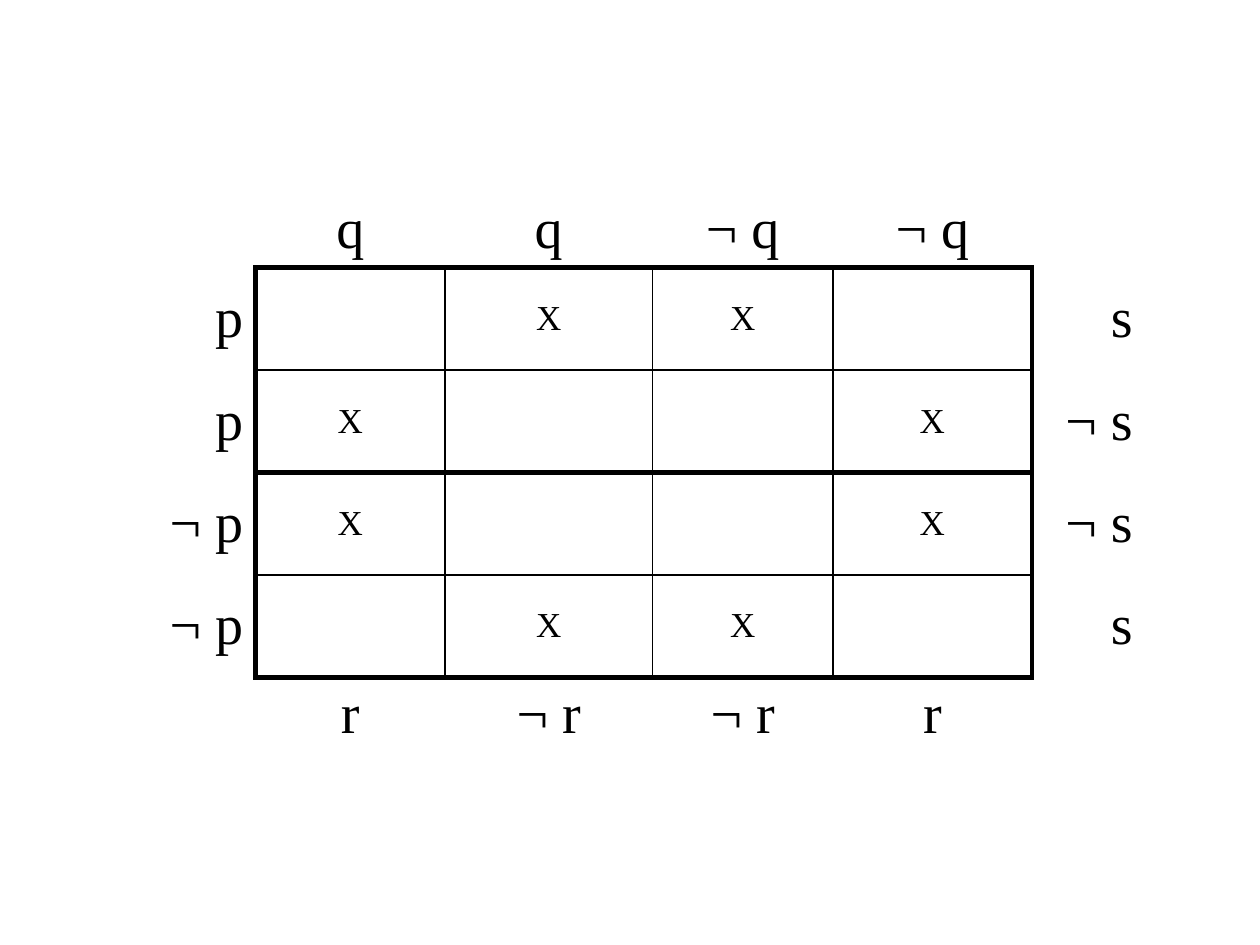
"""Build a slide with a four-variable Karnaugh map."""
from lxml import etree
from pptx import Presentation
from pptx.dml.color import RGBColor
from pptx.enum import text
from pptx.oxml import ns
from pptx.util import Inches, Pt

COLORS = {"ink": "000000"}
FONT = "Times New Roman"
COLUMN_WIDTHS = [1.13, 1.5, 1.65, 1.43, 1.58, 0.9]
ROW_HEIGHT = 4.88 / 6
GRID = [
    ["", "q", "q", "¬ q", "¬ q", ""],
    ["p", "", "X", "X", "", "s"],
    ["p", "X", "", "", "X", "¬ s"],
    ["¬ p", "X", "", "", "X", "¬ s"],
    ["¬ p", "", "X", "X", "", "s"],
    ["", "r", "¬ r", "¬ r", "r", ""],
]
INNER = range(1, 5)
HORIZONTAL_LINES = {1: 3, 2: 1, 3: 3, 4: 1, 5: 3}
VERTICAL_LINES = {1: 3, 2: 1, 3: 1, 4: 1, 5: 3}
ANCHORS = {0: text.MSO_ANCHOR.BOTTOM, 5: text.MSO_ANCHOR.TOP}


def add_border(cell, side, points):
    properties = cell._tc.get_or_add_tcPr()
    line = etree.SubElement(properties, ns.qn(f"a:ln{side}"), w=str(Pt(points)))
    if points:
        fill = etree.SubElement(line, ns.qn("a:solidFill"))
        etree.SubElement(fill, ns.qn("a:srgbClr"), val=COLORS["ink"])
    else:
        etree.SubElement(line, ns.qn("a:noFill"))


presentation = Presentation()
presentation.slide_width = Inches(10)
presentation.slide_height = Inches(7.5)
slide = presentation.slides.add_slide(presentation.slide_layouts[6])

table = slide.shapes.add_table(
    6, 6, Inches(0.9), Inches(1.31), Inches(8.19), Inches(4.88)
).table
table.first_row = False
table.horz_banding = False
for column, width in zip(table.columns, COLUMN_WIDTHS):
    column.width = Inches(width)
for row in table.rows:
    row.height = Inches(ROW_HEIGHT)

for row_index, labels in enumerate(GRID):
    for column_index, label in enumerate(labels):
        cell = table.cell(row_index, column_index)
        vertical = VERTICAL_LINES if row_index in INNER else {}
        horizontal = HORIZONTAL_LINES if column_index in INNER else {}
        add_border(cell, "L", vertical.get(column_index, 0))
        add_border(cell, "R", vertical.get(column_index + 1, 0))
        add_border(cell, "T", horizontal.get(row_index, 0))
        add_border(cell, "B", horizontal.get(row_index + 1, 0))
        cell.fill.background()
        if not label:
            continue
        cell.vertical_anchor = ANCHORS.get(row_index, text.MSO_ANCHOR.MIDDLE)
        cell.text_frame.text = label
        paragraph = cell.text_frame.paragraphs[0]
        centered = column_index in INNER
        paragraph.alignment = text.PP_ALIGN.CENTER if centered else text.PP_ALIGN.RIGHT
        font = paragraph.runs[0].font
        font.name = FONT
        font.size = Pt(20 if label == "X" else 32)
        font.color.rgb = RGBColor.from_string(COLORS["ink"])

presentation.save("out.pptx")
